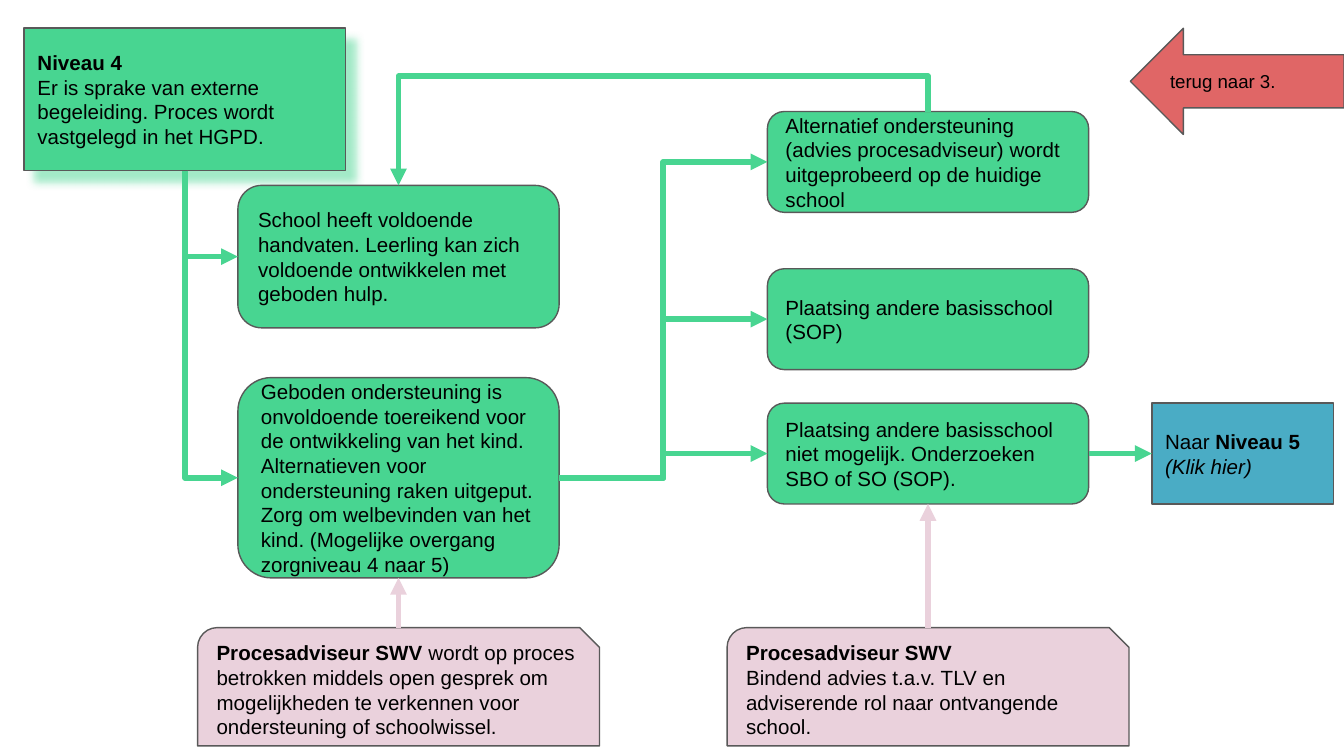
from lxml import etree
from pptx import Presentation
from pptx.dml.color import RGBColor
from pptx.enum.shapes import MSO_CONNECTOR, MSO_SHAPE
from pptx.enum.text import MSO_ANCHOR, PP_ALIGN
from pptx.oxml.ns import qn
from pptx.util import Inches, Pt

RECT = MSO_SHAPE.RECTANGLE
ROUNDED = MSO_SHAPE.ROUNDED_RECTANGLE
SNIPPED = MSO_SHAPE.SNIP_ROUND_RECTANGLE
LEFT_ARROW = MSO_SHAPE.LEFT_ARROW
ELBOW = MSO_CONNECTOR.ELBOW
STRAIGHT = MSO_CONNECTOR.STRAIGHT
MIDDLE = MSO_ANCHOR.MIDDLE
LEFT_ALIGN = PP_ALIGN.LEFT

TOP, LEFT, BOTTOM, RIGHT = range(4)  # connection sites

COLORS = {
    "green": "48D591",
    "pink": "EAD1DC",
    "blue": "4AACC5",
    "red": "E06666",
    "outline": "595959",
    "text": "000000",
}
FONT = "Arial"
STEP_W = 2.39
OPTION_H = 0.75
OPTION_X = 5.71
ADVISER_SIZE = (2.99, 0.88)


def rgb(name):
    return RGBColor.from_string(COLORS[name])


def add_box(slide, kind, place, color, paragraphs, size=11):
    """Add a shape; each paragraph is a list of (text, style) runs."""
    box = slide.shapes.add_shape(kind, *(Inches(v) for v in place))
    box.shadow.inherit = False
    box.fill.solid()
    box.fill.fore_color.rgb = rgb(color)
    box.line.color.rgb = rgb("outline")
    box.line.width = Pt(0.75)

    frame = box.text_frame
    frame.word_wrap = True
    frame.vertical_anchor = MIDDLE
    frame.margin_left = frame.margin_right = Inches(0.1)
    frame.margin_top = frame.margin_bottom = Inches(0.1)
    for i, runs in enumerate(paragraphs):
        paragraph = frame.add_paragraph() if i else frame.paragraphs[0]
        paragraph.alignment = LEFT_ALIGN
        paragraph.font.name = FONT
        paragraph.font.size = Pt(size)
        paragraph.font.color.rgb = rgb("text")
        for text, style in runs:
            run = paragraph.add_run()
            run.text = text
            if style == "bold":
                run.font.bold = True
            elif style == "italic":
                run.font.italic = True
    return box


def add_glow_shadow(box, color):
    """Give a box a soft, coloured shadow to the lower right."""
    effects = box._element.spPr.find(qn("a:effectLst"))
    shadow = etree.SubElement(
        effects, qn("a:outerShdw"), blurRad=str(Pt(4.5)), dist=str(Pt(8.2)),
        dir=str(47 * 60000), algn="bl", rotWithShape="0")
    tint = etree.SubElement(shadow, qn("a:srgbClr"), val=COLORS[color])
    etree.SubElement(tint, qn("a:alpha"), val="50000")


def add_arrow(slide, kind, start, end, color="green"):
    """Join two (box, site) ends with an arrow."""
    points = []
    for box, site in (start, end):
        points += [
            box.left + {LEFT: 0, RIGHT: box.width}.get(site, box.width // 2),
            box.top + {TOP: 0, BOTTOM: box.height}.get(site, box.height // 2),
        ]
    arrow = slide.shapes.add_connector(kind, *points)
    # Snipped boxes number their sites differently, so they stay unjoined
    if start[0].auto_shape_type != SNIPPED:
        arrow.begin_connect(*start)
    arrow.end_connect(*end)
    arrow.line.color.rgb = rgb(color)
    arrow.line.width = Pt(3)
    properties = arrow._element.spPr
    etree.SubElement(properties.find(qn("a:ln")), qn("a:tailEnd"), type="triangle")
    etree.SubElement(properties, qn("a:effectLst"))
    return arrow


def turn_elbow(arrow, degrees, flip, preset, bend=None):
    """Rotate an elbow about its centre so that it leaves vertically."""
    x, y, w, h = arrow.left, arrow.top, arrow.width, arrow.height
    arrow.left, arrow.top = x + (w - h) // 2, y + (h - w) // 2
    arrow.width, arrow.height = h, w
    properties = arrow._element.spPr
    frame = properties.find(qn("a:xfrm"))
    frame.set("rot", str(degrees * 60000))
    frame.set("flipH", "1" if flip else "0")
    frame.set("flipV", "0")
    geometry = properties.find(qn("a:prstGeom"))
    geometry.set("prst", preset)
    if bend is not None:
        guides = geometry.find(qn("a:avLst"))
        etree.SubElement(guides, qn("a:gd"), name="adj1",
                         fmla=f"val {round(bend * 100000)}")


def main():
    prs = Presentation()
    prs.slide_width = Inches(10)
    prs.slide_height = Inches(10) * 9 // 16
    slide = prs.slides.add_slide(prs.slide_layouts[6])

    # Level 4 and its two outcomes
    level = add_box(slide, RECT, (0.18, 0.21, STEP_W, 1.06), "green", [
        [("Niveau 4", "bold")],
        [("Er is sprake van externe begeleiding. Proces wordt vastgelegd "
          "in het HGPD.", "")]])
    add_glow_shadow(level, "green")
    sufficient = add_box(slide, ROUNDED, (1.77, 1.38, STEP_W, 1.06), "green", [
        [("School heeft voldoende handvaten. Leerling kan zich voldoende "
          "ontwikkelen met geboden hulp.", "")]])
    insufficient = add_box(slide, ROUNDED, (1.77, 2.81, STEP_W, 1.49), "green", [
        [("Geboden ondersteuning is onvoldoende toereikend voor de "
          "ontwikkeling van het kind. Alternatieven voor ondersteuning raken "
          "uitgeput. Zorg om welbevinden van het kind. (Mogelijke overgang "
          "zorgniveau 4 naar 5)", "")]])

    # Follow-up options
    alternative, other_school, special_school = [
        add_box(slide, ROUNDED, (OPTION_X, y, STEP_W, OPTION_H), "green", [[(text, "")]])
        for y, text in (
            (0.83, "Alternatief ondersteuning (advies procesadviseur) wordt "
                   "uitgeprobeerd op de huidige school"),
            (2, "Plaatsing andere basisschool (SOP)"),
            (3, "Plaatsing andere basisschool niet mogelijk. Onderzoeken "
                "SBO of SO (SOP)."))]

    # Adviser roles
    process_role = add_box(slide, SNIPPED, (1.47, 4.67, *ADVISER_SIZE), "pink", [
        [("Procesadviseur SWV", "bold"),
         (" wordt op proces betrokken middels open gesprek om mogelijkheden "
          "te verkennen voor ondersteuning of schoolwissel.", "")]])
    binding_role = add_box(slide, SNIPPED, (5.41, 4.67, *ADVISER_SIZE), "pink", [
        [("Procesadviseur SWV", "bold")],
        [("Bindend advies t.a.v. TLV en adviserende rol naar ontvangende "
          "school.", "")]])

    # Navigation to the neighbouring levels
    next_level = add_box(slide, RECT, (8.57, 3, 1.35, OPTION_H), "blue", [
        [("Naar ", ""), ("Niveau 5", "bold")],
        [("(Klik hier)", "italic")]])
    add_box(slide, LEFT_ARROW, (8.41, 0.21, 1.59, 0.79), "red",
            [[("terug naar 3.", "")]], size=10)

    # Arrows between the steps
    for outcome in (sufficient, insufficient):
        branch = add_arrow(slide, ELBOW, (level, BOTTOM), (outcome, LEFT))
        turn_elbow(branch, 270, True, "bentConnector2")
    for option in (special_school, other_school, alternative):
        add_arrow(slide, ELBOW, (insufficient, RIGHT), (option, LEFT))
    feedback = add_arrow(slide, ELBOW, (alternative, TOP), (sufficient, TOP))
    turn_elbow(feedback, 90, False, "bentConnector3", bend=-0.48)
    add_arrow(slide, STRAIGHT, (special_school, RIGHT), (next_level, LEFT))
    for role, step in ((process_role, insufficient), (binding_role, special_school)):
        add_arrow(slide, STRAIGHT, (role, TOP), (step, BOTTOM), "pink")

    prs.save("out.pptx")


if __name__ == "__main__":
    main()
